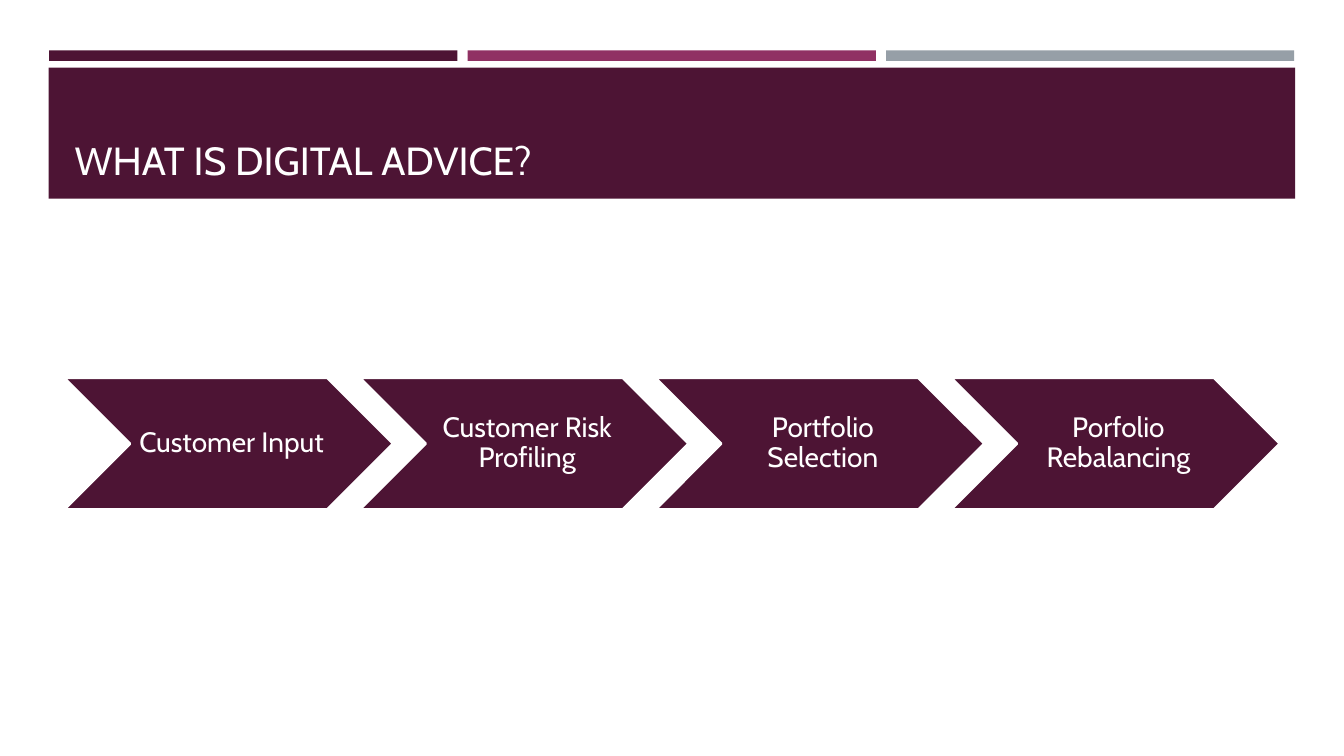
"""Builds the digital advice slide: a title band above a four-step process."""
from pptx import Presentation
from pptx.dml.color import RGBColor
from pptx.enum.shapes import MSO_SHAPE as SHAPE
from pptx.enum.text import MSO_ANCHOR as ANCHOR, MSO_AUTO_SIZE as FIT, PP_ALIGN as ALIGN
from pptx.util import Pt

PLUM = RGBColor(0x4D, 0x14, 0x34)
BERRY = RGBColor(0x90, 0x31, 0x63)
GREY = RGBColor(0x96, 0x9F, 0xA7)
WHITE = RGBColor(0xFF, 0xFF, 0xFF)
FONT = "Cabin"

STEPS = ["Customer Input", "Customer Risk Profiling", "Portfolio Selection", "Porfolio Rebalancing"]
BAR_LEFT, BAR_PITCH = 35.1, 298.9
STEP_LEFT, STEP_TOP, STEP_PITCH = 46.1, 270, 211.15
STEP_WIDTH, STEP_HEIGHT = 234.6, 93.8
LABEL_WIDTH = 141


def add_block(s, kind, left, top, width, height, color):
    sp = s.shapes.add_shape(kind, Pt(left), Pt(top), Pt(width), Pt(height))
    sp.shadow.inherit = False
    sp.fill.solid()
    sp.fill.fore_color.rgb = color
    sp.line.fill.background()
    return sp


def write(tf, text, size, align, anchor):
    tf.word_wrap = True
    tf.auto_size = FIT.NONE
    tf.vertical_anchor = anchor
    p = tf.paragraphs[0]
    p.alignment = align
    p.line_spacing = 0.9
    r = p.add_run()
    r.text = text
    r.font.size = Pt(size)
    r.font.name = FONT
    r.font.color.rgb = WHITE


def add_title(s, text):
    title = s.shapes.title
    title.left, title.top, title.width, title.height = Pt(46.1), Pt(55.4), Pt(868.3), Pt(79.9)
    write(title.text_frame, text, 28, ALIGN.LEFT, ANCHOR.BOTTOM)
    title.element.getparent().append(title.element)


def add_step(s, left, text):
    chevron = add_block(s, SHAPE.CHEVRON, left, STEP_TOP, STEP_WIDTH, STEP_HEIGHT, PLUM)
    chevron.line.color.rgb = WHITE
    chevron.line.width = Pt(1.75)
    label_left = left + (STEP_WIDTH - LABEL_WIDTH) / 2
    label = s.shapes.add_textbox(Pt(label_left), Pt(STEP_TOP), Pt(LABEL_WIDTH), Pt(STEP_HEIGHT))
    tf = label.text_frame
    tf.margin_left = Pt(6.3)
    tf.margin_right = tf.margin_top = tf.margin_bottom = Pt(2.1)
    write(tf, text, 20, ALIGN.CENTER, ANCHOR.MIDDLE)


def main():
    prs = Presentation()
    prs.slide_width, prs.slide_height = Pt(960), Pt(540)
    s = prs.slides.add_slide(prs.slide_layouts[5])
    for i, color in enumerate([PLUM, BERRY, GREY]):
        add_block(s, SHAPE.RECTANGLE, BAR_LEFT + i * BAR_PITCH, 36, 291.6, 7.5, color)
    add_block(s, SHAPE.RECTANGLE, 34.8, 48.4, 890.4, 93.6, PLUM)
    add_title(s, "WHAT IS DIGITAL ADVICE?")
    for i, text in enumerate(STEPS):
        add_step(s, STEP_LEFT + i * STEP_PITCH, text)
    prs.save("out.pptx")


if __name__ == "__main__":
    main()
